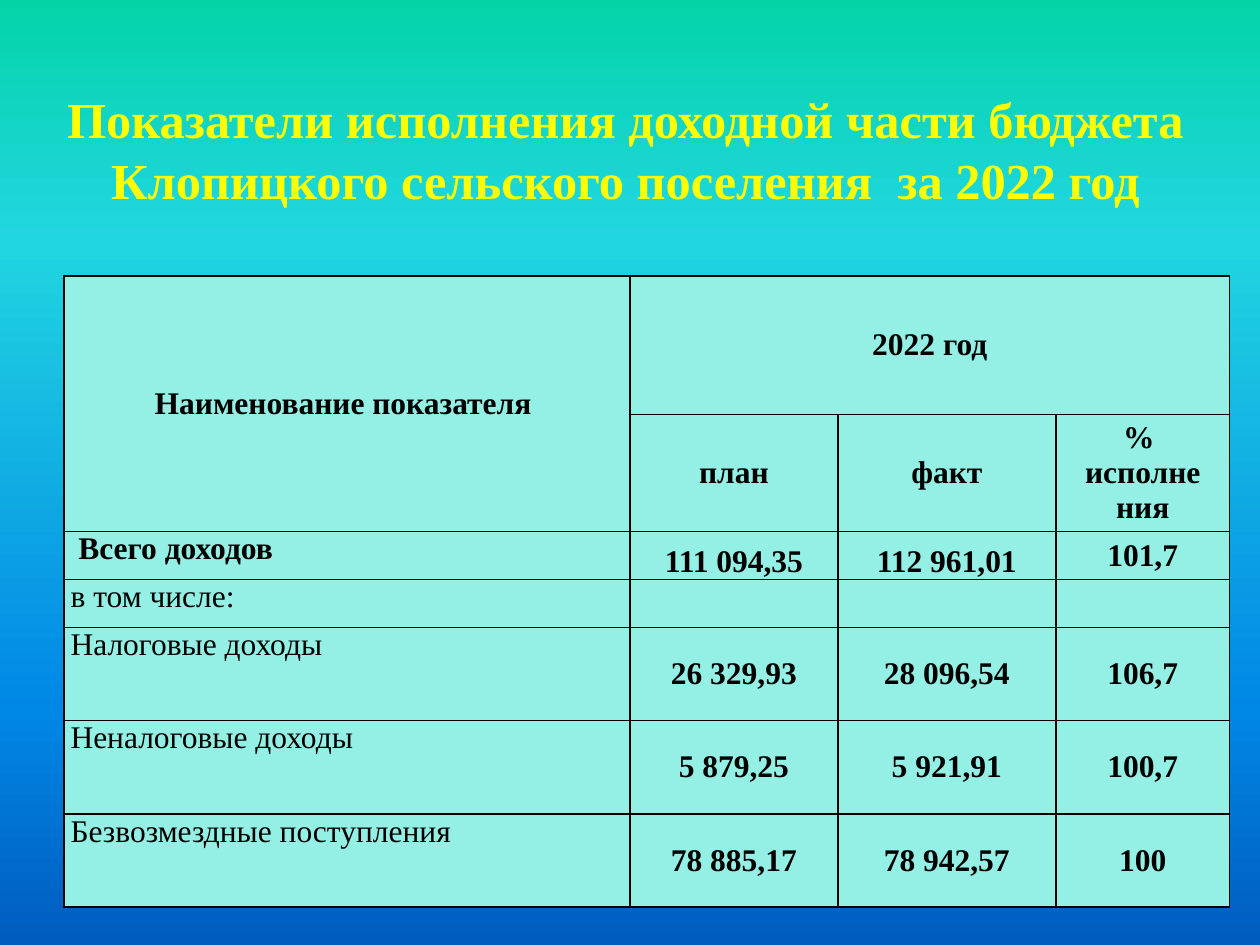
from dataclasses import dataclass
from itertools import product

from lxml.etree import SubElement as Sub
from pptx import Presentation
from pptx.dml.color import RGBColor as Rgb
from pptx.enum.text import MSO_ANCHOR as Anchor, MSO_AUTO_SIZE as Auto, PP_ALIGN as Align
from pptx.oxml.ns import qn
from pptx.slide import Slide
from pptx.table import _Cell as Cell
from pptx.util import Inches, Pt

WIDE, HIGH = Inches(10), Inches(7.5)
FONT = "Times New Roman"
HUES = {"title": "FFFF00", "ink": "000000", "cell": "94F0E4"}
SKY = {0: "03D4A8", 25: "21D6E0", 75: "0087E6", 100: "005CBF"}
COLS = [4.49, 1.65, 1.73, 1.38]
ROWS = [1.1, 0.93, 0.38, 0.38] + [0.74] * 3


@dataclass
class Entry:
    name: str
    plan: str = ""
    fact: str = ""
    rate: str = ""
    bold: bool = False
    low: bool = False


ITEMS = [
    Entry("\u00a0Всего доходов".replace("\u00a0", " "), "111 094,35", "112 961,01", "101,7", True, True),
    Entry("в том числе:"),
    Entry("Налоговые доходы", "26 329,93", "28 096,54", "106,7"),
    Entry("Неналоговые доходы", "5 879,25", "5 921,91", "100,7"),
    Entry("Безвозмездные поступления", "78 885,17", "78 942,57", "100"),
]


def style(para, size: float, hue: str, bold: bool, align: Align) -> None:
    para.alignment = align
    for run in para.runs:
        font = run.font
        font.name, font.size, font.bold = FONT, Pt(size), bold
        font.color.rgb = Rgb.from_string(HUES[hue])


def paint(slide: Slide) -> None:
    fill = slide.background.fill
    fill.gradient()
    fill.gradient_angle = 270
    stops = slide.element.find(".//" + qn("a:gsLst"))
    for stop in list(stops):
        stops.remove(stop)
    for place, hue in SKY.items():
        stop = Sub(stops, qn("a:gs"), pos=str(place * 1000))
        Sub(stop, qn("a:srgbClr"), val=hue)


def frame(cell: Cell) -> None:
    props = cell._tc.get_or_add_tcPr()
    for spot, side in enumerate(("lnL", "lnR", "lnT", "lnB")):
        line = Sub(props, qn("a:" + side), w=str(Pt(1)))
        Sub(Sub(line, qn("a:solidFill")), qn("a:srgbClr"), val=HUES["ink"])
        props.insert(spot, line)
    cell.fill.solid()
    cell.fill.fore_color.rgb = Rgb.from_string(HUES["cell"])
    cell.margin_top = cell.margin_bottom = 0
    cell.margin_left = cell.margin_right = Inches(0.05)


def write(cell: Cell, text: str, bold: bool = True, align: Align = Align.CENTER,
          anchor: Anchor = Anchor.MIDDLE) -> None:
    cell.text_frame.text = text
    cell.vertical_anchor = anchor
    style(cell.text_frame.paragraphs[0], 18, "ink", bold, align)


def head(slide: Slide) -> None:
    title = slide.shapes.title
    title.left, title.top = int(WIDE * 0.016), int(HIGH * 0.03)
    title.width, title.height = int(WIDE * 0.961), int(HIGH * 0.198)
    text = title.text_frame
    text.text = "Показатели исполнения доходной части бюджета Клопицкого сельского поселения  за 2022 год"
    text.word_wrap, text.auto_size = True, Auto.NONE
    text.vertical_anchor = Anchor.BOTTOM
    style(text.paragraphs[0], 28.8, "title", True, Align.CENTER)


def chart(slide: Slide) -> None:
    table = slide.shapes.add_table(
        len(ROWS), len(COLS), int(WIDE * 0.051), int(HIGH * 0.292),
        Inches(sum(COLS)), Inches(sum(ROWS))).table
    table.first_row = table.horz_banding = False
    for col, size in zip(table.columns, COLS):
        col.width = Inches(size)
    for row, size in zip(table.rows, ROWS):
        row.height = Inches(size)
    for row, col in product(range(len(ROWS)), range(len(COLS))):
        frame(table.cell(row, col))

    table.cell(0, 0).merge(table.cell(1, 0))
    table.cell(0, 1).merge(table.cell(0, 3))
    write(table.cell(0, 0), "Наименование показателя ")
    write(table.cell(0, 1), "2022 год")
    for col, text in enumerate(("план", "факт", "%  исполне ния"), 1):
        write(table.cell(1, col), text)

    for row, item in enumerate(ITEMS, 2):
        write(table.cell(row, 0), item.name, item.bold, Align.LEFT, Anchor.TOP)
        for col, text in enumerate((item.plan, item.fact, item.rate), 1):
            low = item.low and col < 3
            write(table.cell(row, col), text, anchor=Anchor.BOTTOM if low else Anchor.MIDDLE)


def main() -> None:
    deck = Presentation()
    deck.slide_width, deck.slide_height = WIDE, HIGH
    slide = deck.slides.add_slide(deck.slide_layouts[5])
    paint(slide)
    head(slide)
    chart(slide)
    deck.save("out.pptx")


if __name__ == "__main__":
    main()
